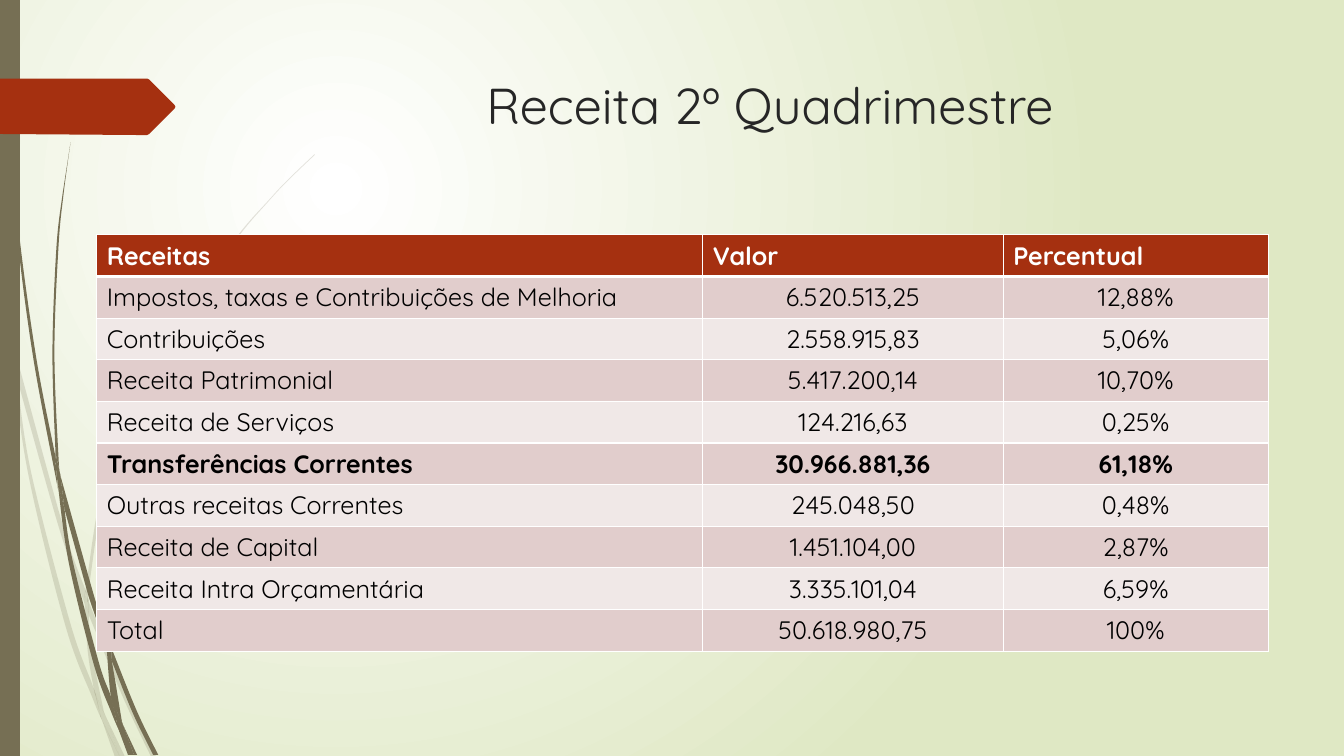
from dataclasses import dataclass

from lxml import etree
from pptx import Presentation
from pptx.dml.color import RGBColor
from pptx.enum import text
from pptx.oxml import ns
from pptx.util import Inches, Pt

WHITE = RGBColor(0xFF, 0xFF, 0xFF)
BLACK = RGBColor(0x00, 0x00, 0x00)
TITLE_GRAY = RGBColor(0x26, 0x26, 0x26)
PALE_GREEN = RGBColor(0xDF, 0xE8, 0xC4)
OLIVE = RGBColor(0x76, 0x6F, 0x54)
RUST = RGBColor(0xA5, 0x30, 0x10)
BAND_DARK = RGBColor(0xE1, 0xCD, 0xCC)
BAND_LIGHT = RGBColor(0xF0, 0xE8, 0xE7)
FONT = "Quicksand"

Points = tuple[tuple[float, float], ...]


@dataclass
class Blade:
    """A piece of grass: one edge on the way out, one on the way back."""
    out: Points
    back: Points


@dataclass
class Revenue:
    name: str
    value: str
    share: str
    bold: bool = False


FADED_BLADES = [
    Blade(((0.11, 3.5), (0.09, 3.22), (0, 2.82)), ((0, 2.99), (0.1, 3.44))),
    Blade(((0.14, 3.45), (0.62, 5.2), (0.85, 5.86)),
          ((0.84, 5.99), (0.58, 5.22), (0.17, 3.76))),
    Blade(((0.88, 5.96), (0.92, 6.07), (1.27, 6.92), (1.55, 7.51)),
          ((1.5, 7.51), (1.23, 6.94), (0.88, 6.1))),
    Blade(((1.19, 7.51), (1.24, 7.51)), ((1.05, 7.11),)),
    Blade(((0.11, 3.5), (0.28, 4.7), (0.65, 6.21), (0.92, 6.93), (1.01, 7.14)),
          ((0.99, 7.07), (0.93, 6.83), (0.7, 6.19), (0.31, 4.69), (0.17, 3.76))),
    Blade(((0.84, 5.99), (0.87, 6.46), (0.93, 6.83), (0.96, 6.92), (1.05, 7.11)),
          ((1.03, 7.06), (0.91, 6.46), (0.88, 6.1), (0.88, 6.08))),
    Blade(((0.88, 5.96), (0.88, 5.84), (1.1, 4.62), (1.6, 3.49), (2.29, 2.45),
           (2.68, 1.98), (2.9, 1.75), (3.12, 1.54)),
          ((3.12, 1.53), (2.89, 1.75), (2.68, 1.97), (2.28, 2.44), (1.58, 3.48),
           (1.07, 4.61), (0.85, 5.84), (0.85, 5.86))),
    Blade(((1.01, 7.14), (1.14, 7.51)), ((1.19, 7.51),)),
    Blade(((0.88, 6.1), (0.88, 5.96), (0.85, 5.86)), ((0.84, 5.99), (0.88, 6.08))),
    Blade(((0.93, 6.83), (0.99, 7.07), (1.01, 7.14), (1.19, 7.51)),
          ((1.05, 7.11), (0.96, 6.92))),
]

SOLID_BLADES = [
    Blade(((0.03, 0), (0.04, 0.48), (0.07, 1.1), (0.17, 2.33), (0.33, 3.55),
           (0.56, 4.77), (0.57, 4.81)),
          ((0.55, 4.57), (0.55, 4.53), (0.36, 3.55), (0.19, 2.32), (0.08, 1.09),
           (0.05, 0.48), (0.04, 0))),
    Blade(((0.6, 4.72), (0.93, 5.9), (1.06, 6.31), (1.06, 6.45)),
          ((0.88, 5.92), (0.64, 5.05))),
    Blade(((1.1, 6.41), (1.13, 6.49), (1.36, 7.06), (1.57, 7.49)),
          ((1.52, 7.49), (1.32, 7.08), (1.11, 6.56))),
    Blade(((0.57, 4.77), (0.68, 5.57), (0.93, 6.59), (1.11, 7.08), (1.17, 7.22)),
          ((1.16, 7.17), (1.1, 6.91), (0.98, 6.57), (0.72, 5.56), (0.64, 5.05))),
    Blade(((0.6, 4.72), (0.58, 4.53), (0.54, 3.49), (0.58, 2.45), (0.63, 1.93),
           (0.7, 1.41)),
          ((0.62, 1.93), (0.56, 2.45), (0.52, 3.49), (0.55, 4.49))),
    Blade(((1.33, 7.49), (1.36, 7.49)), ((1.22, 7.19),)),
    Blade(((0.55, 4.49), (0.55, 4.53), (0.57, 4.77), (0.64, 5.05)), ((0.6, 4.72),)),
    Blade(((1.1, 6.41), (1.11, 6.33), (1.25, 5.52), (1.58, 4.76), (2.05, 4.06),
           (2.31, 3.74), (2.45, 3.59), (2.61, 3.44)),
          ((2.6, 3.44), (2.45, 3.58), (2.31, 3.73), (2.04, 4.05), (1.56, 4.74),
           (1.22, 5.51), (1.06, 6.31))),
    Blade(((1.17, 7.22), (1.27, 7.49)), ((1.31, 7.49),)),
    Blade(((1.06, 6.45), (1.1, 6.91), (1.16, 7.06), (1.22, 7.19)),
          ((1.21, 7.16), (1.11, 6.56), (1.09, 6.51))),
    Blade(((1.06, 6.31), (1.06, 6.45), (1.11, 6.56)), ((1.1, 6.41),)),
    Blade(((1.1, 6.91), (1.16, 7.17), (1.17, 7.22), (1.3, 7.49)),
          ((1.33, 7.49), (1.22, 7.19), (1.16, 7.06))),
]

ARROW = ((0, 0.78), (1.46, 0.78), (1.48, 0.79), (1.73, 1.04), (1.74, 1.06),
         (1.73, 1.08), (1.48, 1.33), (1.46, 1.34), (1.36, 1.34), (0, 1.33))
SIDE_BAR = ((0, 0), (0.2, 0), (0.2, 7.5), (0, 7.5))

HEADER = Revenue("Receitas", "Valor", "Percentual", True)
REVENUES = [
    Revenue("Impostos, taxas e Contribuições de Melhoria", "6.520.513,25", "12,88%"),
    Revenue("Contribuições", "2.558.915,83", "5,06%"),
    Revenue("Receita Patrimonial", "5.417.200,14", "10,70%"),
    Revenue("Receita de Serviços", "124.216,63", "0,25%"),
    Revenue("Transferências Correntes", "30.966.881,36", "61,18%", True),
    Revenue("Outras receitas Correntes", "245.048,50", "0,48%"),
    Revenue("Receita de Capital", "1.451.104,00", "2,87%"),
    Revenue("Receita Intra Orçamentária", "3.335.101,04", "6,59%"),
    Revenue("Total", "50.618.980,75", "100%"),
]


def draw_outline(slide, points: Points, color: RGBColor, opacity: int = 100):
    corners = [(Inches(x), Inches(y)) for x, y in points]
    builder = slide.shapes.build_freeform(*corners[0])
    builder.add_line_segments(corners[1:], close=True)
    shape = builder.convert_to_shape()
    shape.shadow.inherit = False
    shape.line.fill.background()
    shape.fill.solid()
    shape.fill.fore_color.rgb = color
    if opacity < 100:
        fill_color = shape.element.spPr.find(ns.qn("a:solidFill"))[0]
        etree.SubElement(fill_color, ns.qn("a:alpha"), val=str(opacity * 1000))
    return shape


def draw_blade(slide, blade: Blade, opacity: int) -> None:
    """Draw the blade, then bend each edge into a smooth run of Bézier curves."""
    shape = draw_outline(slide, blade.out + blade.back, OLIVE, opacity)
    outline = shape.element.find(".//" + ns.qn("a:path"))
    points = [(int(p.get("x")), int(p.get("y"))) for p in outline.iter(ns.qn("a:pt"))]
    lines = outline.findall(ns.qn("a:lnTo"))
    turn = len(blade.out)
    for edge_start, edge_end in ((0, turn - 1), (turn, len(points) - 1)):
        for i in range(edge_start, edge_end):
            before, start = points[max(i - 1, edge_start)], points[i]
            end, after = points[i + 1], points[min(i + 2, edge_end)]
            leave = [s + (e - b) / 6 for b, s, e in zip(before, start, end)]
            arrive = [e - (a - s) / 6 for s, e, a in zip(start, end, after)]
            curve = etree.Element(ns.qn("a:cubicBezTo"))
            for x, y in (leave, arrive, end):
                etree.SubElement(curve, ns.qn("a:pt"), x=str(round(x)), y=str(round(y)))
            outline.replace(lines[i], curve)


def paint_background(slide) -> None:
    fill = slide.background.fill
    fill.gradient()
    for stop, color in zip(fill.gradient_stops, (WHITE, PALE_GREEN)):
        stop.color.rgb = color
    gradient = slide.element.find(".//" + ns.qn("a:gradFill"))
    gradient.remove(gradient.find(ns.qn("a:lin")))
    circle = etree.SubElement(gradient, ns.qn("a:path"))
    circle.set("path", "circle")
    etree.SubElement(circle, ns.qn("a:fillToRect"),
                     l="50000", t="50000", r="100000", b="100000")


def format_paragraph(paragraph, size: int, color: RGBColor, bold: bool, centered: bool) -> None:
    paragraph.alignment = text.PP_ALIGN.CENTER if centered else text.PP_ALIGN.LEFT
    font = paragraph.runs[0].font
    font.name, font.size, font.bold = FONT, Pt(size), bold
    font.color.rgb = color


def set_borders(cell, bottom: int, top: int) -> None:
    properties = cell._tc.get_or_add_tcPr()
    widths = {"lnL": 1, "lnR": 1, "lnT": top, "lnB": bottom}
    for position, (side, width) in enumerate(widths.items()):
        line = etree.Element(ns.qn("a:" + side), w=str(Pt(width)))
        fill = etree.SubElement(line, ns.qn("a:solidFill"))
        etree.SubElement(fill, ns.qn("a:srgbClr"), val=str(WHITE))
        properties.insert(position, line)


def draw_table(slide) -> None:
    rows = [HEADER, *REVENUES]
    height = Inches(4.13)
    table = slide.shapes.add_table(len(rows), 3, Inches(0.96), Inches(2.33),
                                   Inches(11.62), height).table
    for column, width in zip(table.columns, (6.01, 2.98, 2.63)):
        column.width = Inches(width)
    for i, revenue in enumerate(rows):
        table.rows[i].height = height // len(rows)
        header = i == 0
        for j, label in enumerate((revenue.name, revenue.value, revenue.share)):
            cell = table.cell(i, j)
            cell.text_frame.text = label
            format_paragraph(cell.text_frame.paragraphs[0], 18, WHITE if header else BLACK,
                             revenue.bold, j > 0 and not header)
            cell.fill.solid()
            cell.fill.fore_color.rgb = RUST if header else (BAND_LIGHT, BAND_DARK)[i % 2]
            set_borders(cell, bottom=3 if header else 1, top=3 if i == 1 else 1)


def main() -> None:
    presentation = Presentation()
    presentation.slide_width, presentation.slide_height = Inches(13.33), Inches(7.5)
    slide = presentation.slides.add_slide(presentation.slide_layouts[6])
    paint_background(slide)

    # Grass, side bar and arrow
    for blades, opacity in ((FADED_BLADES, 20), (SOLID_BLADES, 100)):
        for blade in blades:
            draw_blade(slide, blade, opacity)
    draw_outline(slide, SIDE_BAR, OLIVE)
    draw_outline(slide, ARROW, RUST)

    # Title
    title = slide.shapes.add_textbox(Inches(2.83), Inches(0.69), Inches(9.75), Inches(1.4))
    title.text_frame.word_wrap = True
    title.text_frame.text = "Receita 2º Quadrimestre "
    format_paragraph(title.text_frame.paragraphs[0], 36, TITLE_GRAY, False, True)

    draw_table(slide)
    presentation.save("out.pptx")


if __name__ == "__main__":
    main()
